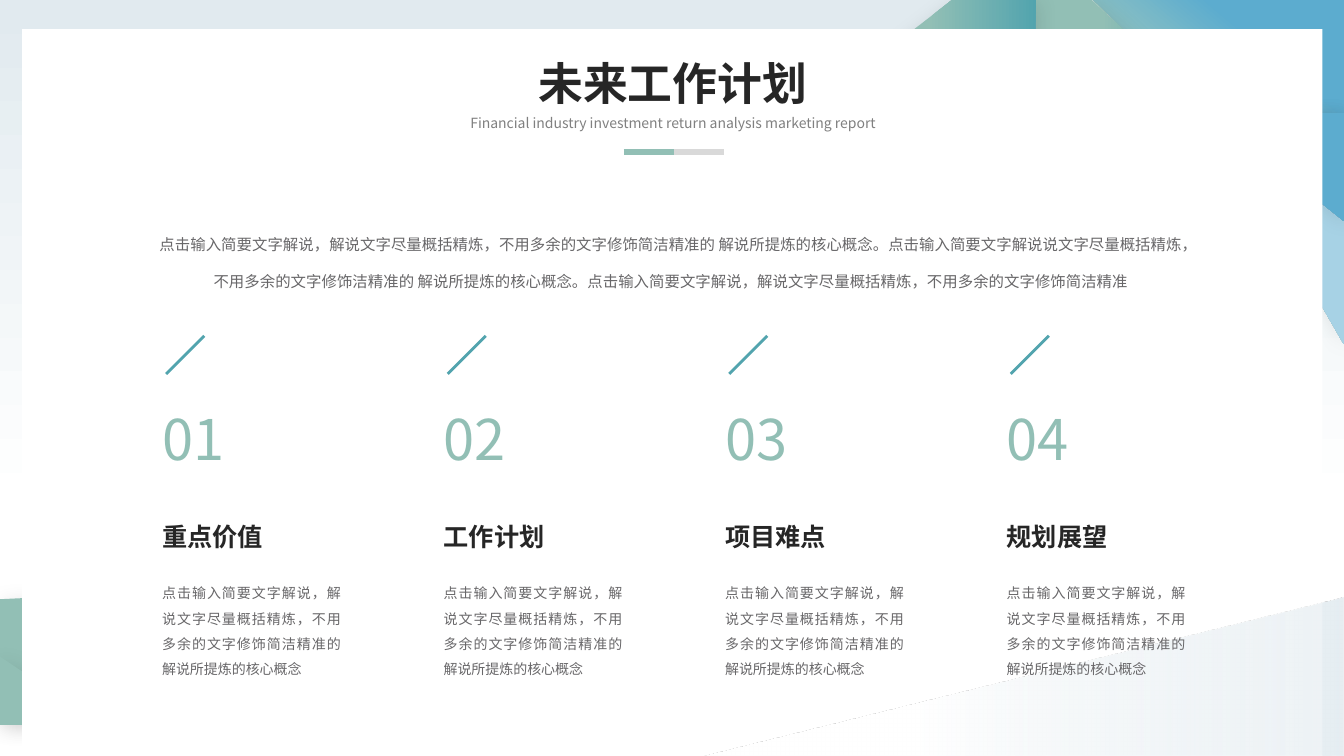
from lxml import etree
from pptx import Presentation
from pptx.dml.color import RGBColor
from pptx.enum.shapes import MSO_CONNECTOR, MSO_SHAPE
from pptx.enum.text import MSO_AUTO_SIZE, PP_ALIGN
from pptx.oxml.ns import qn
from pptx.util import Pt

TITLE = "未来工作计划"
SUBTITLE = "Financial industry investment return analysis marketing report"
INTRO = (
    "点击输入简要文字解说，解说文字尽量概括精炼，不用多余的文字修饰简洁精准的 解说所提炼的核心概念。"
    "点击输入简要文字解说说文字尽量概括精炼，不用多余的文字修饰洁精准的 解说所提炼的核心概念。"
    "点击输入简要文字解说，解说文字尽量概括精炼，不用多余的文字修饰简洁精准"
)
PLANS = ["重点价值", "工作计划", "项目难点", "规划展望"]
PLAN_BODY = "点击输入简要文字解说，解说文字尽量概括精炼，不用多余的文字修饰简洁精准的 解说所提炼的核心概念"

THEME = {
    "font": "Noto Sans CJK SC",
    "white": "FFFFFF", "mist": "E1EAEF", "ink": "262626", "body": "686769",
    "muted": "808080", "rule": "D9D9D9", "teal": "52A4AE", "sage": "92BFB5",
    "lagoon": "77B6BF", "mint": "B6D3B7", "blue": "5CACCF", "sky": "A7D2E5",
    "title_size": 32, "subtitle_size": 10, "intro_size": 11,
    "number_size": 40, "plan_size": 18, "body_size": 10,
}

W, H = 960, 540
PANEL = (15.8, 20.9, 928.8, 519.1)
CORNER = [(502.6, H), (W, 427), (W, H)]
FACETS = [
    ([(87.1, 517), (20.9, 427), (0, 427.7), (0, 517)], (37, "sage"), (76, "teal"), 20),
    ([(0, 469.4), (73.4, 517.7), (0, 517.7)], (45, "sage"), (100, "lagoon"), 0),
    ([(781.2, 0), (W, 0), (W, 175)], (31, "mint"), (75, "blue"), 310),
    ([(864.7, 80.6), (W, 80.6), (W, 245.5)], (0, "sage"), (63, "sky"), 0),
    ([(864, 80.6), (W, 80.6), (W, 157.7)], (0, "sage"), (65, "blue"), 0),
    ([(733.7, 179.3), (738.7, 0), (779.8, 0), (866.9, 82.8)], (40, "sage"), (93, "teal"), 0),
    ([(733.7, 180), (618.5, 48.2), (680.4, 0), (740.2, 0)], (37, "sage"), (100, "teal"), 0),
]
PLAN_LEFT, PLAN_PITCH = 108.7, 201.1
SLASH = 27.2
RULE_LEFT, RULE_WIDTH, RULE_Y = 445.7, 35.8, 108.7

prs = Presentation()
prs.slide_width, prs.slide_height = Pt(W), Pt(H)
s = prs.slides.add_slide(prs.slide_layouts[6])


def rgb(name):
    return RGBColor.from_string(THEME[name])


def set_gradient(fill, first, last, angle=0):
    fill.gradient()
    fill.gradient_angle = (360 - angle) % 360
    for stop, (position, color) in zip(fill.gradient_stops, (first, last)):
        stop.position = position / 100
        stop.color.rgb = rgb(color)


def add_rect(x, y, w, h):
    sp = s.shapes.add_shape(MSO_SHAPE.RECTANGLE, Pt(x), Pt(y), Pt(w), Pt(h))
    sp.shadow.inherit = False
    sp.line.fill.background()
    return sp


def add_polygon(points, first, last, angle):
    builder = s.shapes.build_freeform(*points[0], scale=Pt(1))
    builder.add_line_segments(points[1:], close=True)
    sp = builder.convert_to_shape()
    sp.shadow.inherit = False
    sp.line.fill.background()
    set_gradient(sp.fill, first, last, angle)
    return sp


def add_soft_shadow(sp):
    effects = sp._element.spPr.find(qn("a:effectLst"))
    shadow = etree.SubElement(effects, qn("a:outerShdw"), blurRad=str(Pt(15)),
                              dist=str(Pt(3)), dir="2700000", algn="tl", rotWithShape="0")
    color = etree.SubElement(shadow, qn("a:srgbClr"), val="000000")
    etree.SubElement(color, qn("a:alpha"), val="10000")


def add_corner():
    sp = add_polygon(CORNER, (0, "mist"), (67, "white"), 180)
    color = next(sp._element.spPr.iter(qn("a:srgbClr")))
    etree.SubElement(color, qn("a:alpha"), val="57000")


def add_line(x1, y1, x2, y2, color, width):
    line = s.shapes.add_connector(MSO_CONNECTOR.STRAIGHT, Pt(x1), Pt(y1), Pt(x2), Pt(y2))
    line.line.color.rgb = rgb(color)
    line.line.width = Pt(width)
    etree.SubElement(line._element.spPr, qn("a:effectLst"))


def add_text(text, x, y, w, h, *, size, color, fade=None, bold=False,
             align=PP_ALIGN.LEFT, spacing=None, wrap=True):
    tf = s.shapes.add_textbox(Pt(x), Pt(y), Pt(w), Pt(h)).text_frame
    tf.word_wrap = wrap
    tf.auto_size = MSO_AUTO_SIZE.SHAPE_TO_FIT_TEXT
    p = tf.paragraphs[0]
    p.alignment = align
    p.line_spacing = spacing
    r = p.add_run()
    r.text = text
    r.font.size = Pt(THEME[size])
    r.font.bold = bold
    if fade:
        set_gradient(r.font.fill, (0, color), (100, fade))
    else:
        r.font.color.rgb = rgb(color)
    r.font.name = THEME["font"]
    etree.SubElement(r._r.get_or_add_rPr(), qn("a:ea"), typeface=THEME["font"])


backdrop = add_rect(0, 0, W, H)
set_gradient(backdrop.fill, (0, "mist"), (67, "white"), 90)
add_corner()
for facet in FACETS:
    add_soft_shadow(add_polygon(*facet))
panel = add_rect(*PANEL)
panel.fill.solid()
panel.fill.fore_color.rgb = rgb("white")
add_corner()

for i, color in enumerate(("sage", "rule")):
    x = RULE_LEFT + i * RULE_WIDTH
    add_line(x, RULE_Y, x + RULE_WIDTH, RULE_Y, color, 4.5)

for i, plan in enumerate(PLANS):
    x = PLAN_LEFT + i * PLAN_PITCH
    add_text(PLAN_BODY, x, 408.2, 141.8, 79.9, size="body_size", color="body",
             align=PP_ALIGN.JUSTIFY, spacing=1.5)
    add_text(plan, x, 362.2, 87.1, 33.1, size="plan_size", color="ink",
             bold=True, spacing=1.3, wrap=False)
    add_text(f"{i + 1:02}", x, 270.7, 61.9, 64.1, size="number_size", color="sage",
             fade="teal", spacing=1.3, wrap=False)
    add_line(x + 10, 267.1, x + 10 + SLASH, 267.1 - SLASH, "teal", 2)

add_text(INTRO, 105.1, 151.2, 748.8, 116.6, size="intro_size", color="body",
         align=PP_ALIGN.CENTER, spacing=2.0)
add_text(TITLE, 376.6, 36, 208.1, 46.1, size="title_size", color="ink",
         bold=True, align=PP_ALIGN.CENTER, wrap=False)
add_text(SUBTITLE, 261.4, 78.5, 438.5, 19.4, size="subtitle_size", color="muted",
         align=PP_ALIGN.CENTER)

prs.save("out.pptx")
